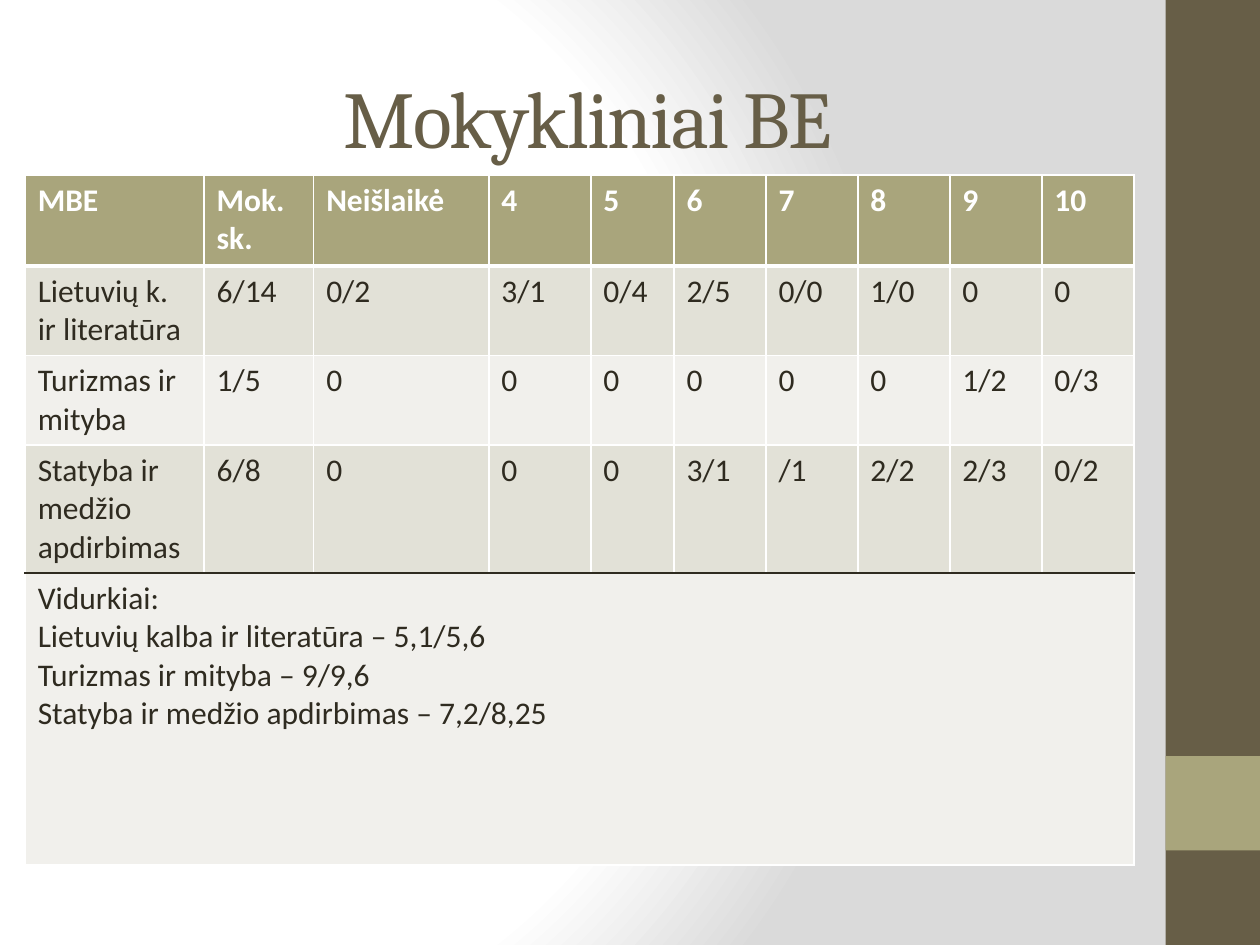
from dataclasses import dataclass

from pptx import Presentation
from pptx import util as u
from pptx.dml.color import RGBColor
from pptx.enum import shapes, text
from pptx.oxml import parse_xml
from pptx.oxml.ns import nsdecls


@dataclass(frozen=True)
class Theme:
    """Colours, fonts and type sizes of the slide."""
    brown: str = "675E47"
    olive: str = "A9A57C"
    ink: str = "2F2B20"
    white: str = "FFFFFF"
    grey: str = "DADADA"
    band: str = "E2E1D7"
    pale: str = "F1F0EC"
    head: str = "Cambria"
    body: str = "Calibri"
    big: int = 46
    small: int = 18


class Deck:
    """Holds the theme and the current slide, and draws on it."""

    def __init__(self, theme):
        self.theme = theme
        self.prs = Presentation()
        self.prs.slide_width = u.Inches(10)
        self.prs.slide_height = u.Inches(7.5)
        self.slide = self.prs.slides.add_slide(self.prs.slide_layouts[5])

    def ground(self):
        """Fill the background with a round gradient."""
        self.slide.background.fill.gradient()
        old = self.slide._element.xpath("./p:cSld/p:bg/p:bgPr/a:gradFill")[0]
        t = self.theme
        stops = "".join(
            f'<a:gs pos="{pos * 1000}"><a:srgbClr val="{tint}"/></a:gs>'
            for pos, tint in ((0, t.white), (75, t.white), (100, t.grey)))
        new = parse_xml(
            f'<a:gradFill {nsdecls("a")} rotWithShape="1"><a:gsLst>{stops}</a:gsLst>'
            '<a:path path="circle"><a:fillToRect l="20000" t="50000" '
            'r="100000" b="50000"/></a:path></a:gradFill>')
        old.getparent().replace(old, new)

    def block(self, left, top, width, height, tint):
        """Draw a plain filled rectangle."""
        box = self.slide.shapes.add_shape(
            shapes.MSO_SHAPE.RECTANGLE, *map(u.Inches, (left, top, width, height)))
        box.shadow.inherit = False
        box.fill.solid()
        box.fill.fore_color.rgb = RGBColor.from_string(tint)
        box.line.fill.background()

    def add_run(self, para, words, face, size, tint, bold=False):
        """Add one styled run to a paragraph."""
        run = para.add_run()
        run.text = words
        run.font.name = face
        run.font.size = u.Pt(size)
        run.font.bold = bold
        run.font.color.rgb = RGBColor.from_string(tint)
        return run

    def title(self, words, left, top, width, height):
        """Place the title and fill in its words."""
        box = self.slide.shapes.title
        box.left, box.top, box.width, box.height = map(
            u.Inches, (left, top, width, height))
        frame = box.text_frame
        frame.vertical_anchor = text.MSO_ANCHOR.MIDDLE
        para = frame.paragraphs[0]
        para.alignment = text.PP_ALIGN.CENTER
        t = self.theme
        run = self.add_run(para, words, t.head, t.big, t.brown)
        run.font._element.set("spc", "-100")

    def cell(self, cell, lines, fill, tint, bold, top, base):
        """Fill and border one table cell and add its lines."""
        t = self.theme
        props = cell._tc.get_or_add_tcPr()
        plain = (t.white, 1)
        for side, (hue, wide) in zip("LRTB", (plain, plain, top, base)):
            props.append(parse_xml(
                f'<a:ln{side} {nsdecls("a")} w="{u.Pt(wide)}"><a:solidFill>'
                f'<a:srgbClr val="{hue}"/></a:solidFill></a:ln{side}>'))
        cell.fill.solid()
        cell.fill.fore_color.rgb = RGBColor.from_string(fill)
        frame = cell.text_frame
        for i, line in enumerate(lines):
            para = frame.add_paragraph() if i else frame.paragraphs[0]
            self.add_run(para, line, t.body, t.small, tint, bold)

    def table(self, left, top, cols, rows, data, notes):
        """Draw the results, with the notes merged across the last row."""
        t = self.theme
        grid = self.slide.shapes.add_table(
            len(rows), len(cols),
            *map(u.Inches, (left, top, sum(cols), sum(rows)))).table
        for col, wide in zip(grid.columns, cols):
            col.width = u.Inches(wide)
        for row, high in zip(grid.rows, rows):
            row.height = u.Inches(high)
        thin, thick, dark = (t.white, 1), (t.white, 3), (t.ink, 1)
        edges = [thin, thick] + [thin] * (len(data) - 2) + [dark]
        for r, line in enumerate(data):
            first = r == 0
            fill = t.olive if first else (t.band if r % 2 else t.pale)
            tint = t.white if first else t.ink
            for c, words in enumerate(line):
                self.cell(grid.cell(r, c), [words], fill, tint, first,
                          edges[r], edges[r + 1])
        last = len(data)
        foot = grid.cell(last, 0)
        foot.merge(grid.cell(last, len(cols) - 1))
        self.cell(foot, notes, t.pale, t.ink, False, edges[last], thin)


def main():
    theme = Theme()
    deck = Deck(theme)
    deck.ground()
    deck.block(9.25, 0, 0.75, 7.5, theme.brown)
    deck.block(9.25, 6, 0.75, 0.75, theme.olive)
    deck.title("Mokykliniai BE", 0.5, 0.3, 8.33, 1.25)
    data = [
        ["MBE", "Mok. sk.", "Neišlaikė", "4", "5", "6", "7", "8", "9", "10"],
        ["Lietuvių k. ir literatūra", "6/14", "0/2", "3/1", "0/4", "2/5",
         "0/0", "1/0", "0", "0"],
        ["Turizmas ir mityba", "1/5", "0", "0", "0", "0", "0", "0", "1/2", "0/3"],
        ["Statyba ir medžio apdirbimas", "6/8", "0", "0", "0", "3/1", "/1",
         "2/2", "2/3", "0/2"],
    ]
    notes = [
        "Vidurkiai:",
        "Lietuvių kalba ir literatūra – 5,1/5,6",
        "Turizmas ir mityba – 9/9,6",
        "Statyba ir medžio apdirbimas – 7,2/8,25",
    ]
    cols = [1.42, 0.87, 1.39, 0.81, 0.66] + [0.73] * 5
    deck.table(0.2, 1.39, cols, [0.72, 0.58, 0.58, 0.83, 2.32], data, notes)
    deck.prs.save("out.pptx")


if __name__ == "__main__":
    main()
